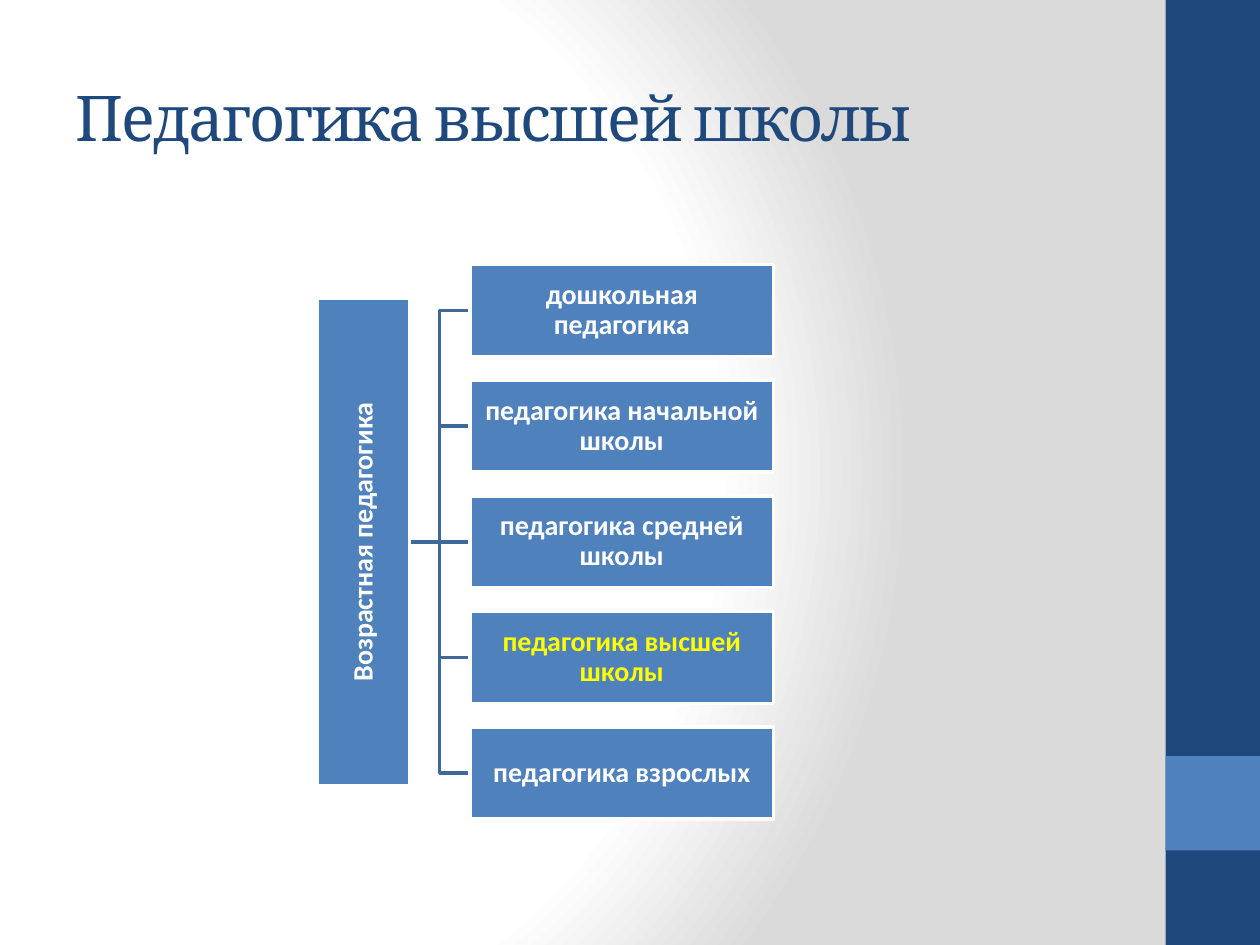
from dataclasses import dataclass

from pptx import Presentation
from pptx.dml.color import RGBColor
from pptx.enum.shapes import MSO_CONNECTOR, MSO_SHAPE
from pptx.enum.text import MSO_ANCHOR, MSO_AUTO_SIZE, PP_ALIGN
from pptx.oxml import parse_xml
from pptx.oxml.ns import nsdecls
from pptx.oxml.xmlchemy import OxmlElement
from pptx.util import Inches, Pt

RECT = MSO_SHAPE.RECTANGLE
ELBOW, STRAIGHT = MSO_CONNECTOR.ELBOW, MSO_CONNECTOR.STRAIGHT
MIDDLE = MSO_ANCHOR.MIDDLE
LEFT, CENTER = PP_ALIGN.LEFT, PP_ALIGN.CENTER

NAVY = RGBColor(0x1F, 0x49, 0x7D)
BLUE = RGBColor(0x4F, 0x81, 0xBD)
LINE_BLUE = RGBColor(0x3F, 0x67, 0x97)
WHITE = RGBColor(0xFF, 0xFF, 0xFF)
YELLOW = RGBColor(0xFF, 0xFF, 0x00)
GRAY = RGBColor(0xDA, 0xDA, 0xDA)

BOX_H = 0.73
ROOT_W, ROOT_X = 3.87, 2.885  # length before rotation, centre
BRANCH_X, BRANCH_W = 3.73, 2.41
CENTER_Y, PITCH = 4.3, 0.9175


@dataclass
class Box:
    text: str
    x: float  # centre
    y: float  # centre
    w: float
    color: RGBColor = WHITE
    rotation: int = 0


def set_background(s) -> None:
    """Fill the slide with a circular gradient from white to gray."""
    stops = "".join(
        f'<a:gs pos="{pos * 1000}"><a:srgbClr val="{color}"/></a:gs>'
        for pos, color in ((0, WHITE), (75, WHITE), (100, GRAY)))
    s.element.cSld.insert(0, parse_xml(
        f'<p:bg {nsdecls("p", "a")}><p:bgPr><a:gradFill rotWithShape="1">'
        f'<a:gsLst>{stops}</a:gsLst><a:path path="circle">'
        '<a:fillToRect l="20000" t="50000" r="100000" b="50000"/></a:path>'
        '</a:gradFill><a:effectLst/></p:bgPr></p:bg>'))


def add_rect(s, x: float, y: float, w: float, h: float, fill: RGBColor):
    sp = s.shapes.add_shape(RECT, Inches(x), Inches(y), Inches(w), Inches(h))
    sp.shadow.inherit = False
    sp.fill.solid()
    sp.fill.fore_color.rgb = fill
    sp.line.fill.background()
    return sp


def add_title(s, text: str) -> None:
    title = s.shapes.title
    title.left, title.top = Inches(0.5), Inches(0.3)
    title.width, title.height = Inches(8.33), Inches(1.25)
    tf = title.text_frame
    tf.text = text
    tf.auto_size = MSO_AUTO_SIZE.NONE
    tf.vertical_anchor = MIDDLE
    p = tf.paragraphs[0]
    p.alignment = LEFT
    font = p.runs[0].font
    font.name, font.size = "Cambria", Pt(36)
    font.color.rgb = NAVY
    p.runs[0]._r.get_or_add_rPr().set("spc", "-100")


def add_box(s, box: Box) -> None:
    sp = add_rect(s, box.x - box.w / 2, box.y - BOX_H / 2, box.w, BOX_H, BLUE)
    sp.rotation = box.rotation
    sp.line.color.rgb = WHITE
    sp.line.width = Pt(2)
    tf = sp.text_frame
    tf.word_wrap = True
    tf.vertical_anchor = MIDDLE
    tf.margin_left = tf.margin_right = Inches(0.01)
    tf.margin_top = tf.margin_bottom = Inches(0.01)
    tf.text = box.text
    p = tf.paragraphs[0]
    p.alignment = CENTER
    p.line_spacing = 0.9
    for r in p.runs:
        r.font.name, r.font.size, r.font.bold = "Calibri", Pt(16), True
        r.font.color.rgb = box.color


def add_link(s, y: float) -> None:
    """Join the root box to the branch centred at height y."""
    kind = STRAIGHT if y == CENTER_Y else ELBOW
    link = s.shapes.add_connector(
        kind, Inches(ROOT_X + BOX_H / 2), Inches(CENTER_Y),
        Inches(BRANCH_X), Inches(y))
    link.line.color.rgb = LINE_BLUE
    link.line.width = Pt(2)
    link._element.spPr.append(OxmlElement("a:effectLst"))


def main() -> None:
    prs = Presentation()
    prs.slide_width, prs.slide_height = Inches(10), Inches(7.5)
    s = prs.slides.add_slide(prs.slide_layouts[5])
    set_background(s)
    add_rect(s, 9.25, 0, 0.75, 7.5, NAVY)
    add_rect(s, 9.25, 6, 0.75, 0.75, BLUE)
    add_title(s, "Педагогика высшей школы")

    branches = [
        ("дошкольная\vпедагогика", WHITE),
        ("педагогика начальной школы", WHITE),
        ("педагогика средней школы", WHITE),
        ("педагогика высшей школы", YELLOW),
        ("педагогика взрослых", WHITE),
    ]
    boxes = [
        Box(text, BRANCH_X + BRANCH_W / 2,
            CENTER_Y + (i - len(branches) // 2) * PITCH, BRANCH_W, color)
        for i, (text, color) in enumerate(branches)
    ]
    for box in boxes:
        add_link(s, box.y)
    root = Box("Возрастная педагогика", ROOT_X, CENTER_Y, ROOT_W, rotation=270)
    for box in [root, *boxes]:
        add_box(s, box)
    prs.save("out.pptx")


if __name__ == "__main__":
    main()
